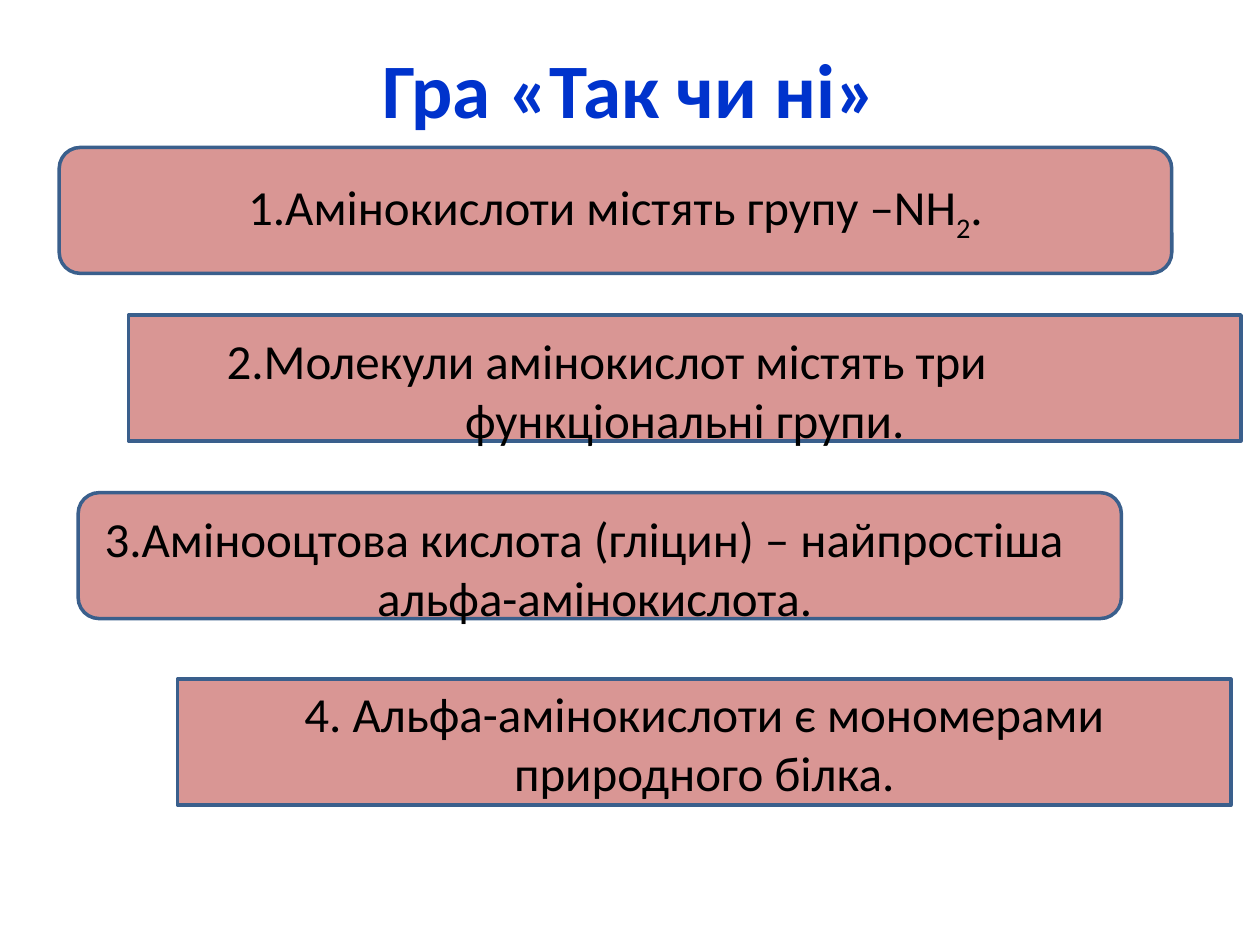
"""Build the yes-or-no quiz slide about amino acids."""
from pptx import Presentation
from pptx.dml.color import RGBColor
from pptx.enum.shapes import MSO_SHAPE
from pptx.enum.text import MSO_ANCHOR, PP_ALIGN
from pptx.util import Inches, Pt

SLIDE_WIDTH, SLIDE_HEIGHT = Inches(10), Inches(7.5)
TITLE_BLUE = RGBColor(0x00, 0x33, 0xCC)
CARD_PINK = RGBColor(0xD9, 0x96, 0x94)
CARD_BORDER = RGBColor(0x3A, 0x5F, 0x8C)
BLACK = RGBColor(0x00, 0x00, 0x00)
CARD_HEIGHT = 13.33


def place(left, top, width, height):
    """Turn percentages of the slide into a position and size."""
    return (
        int(SLIDE_WIDTH * left / 100),
        int(SLIDE_HEIGHT * top / 100),
        int(SLIDE_WIDTH * width / 100),
        int(SLIDE_HEIGHT * height / 100),
    )


def write(paragraph, text, size=28, color=BLACK, bold=False,
          align=PP_ALIGN.CENTER, indent=0, baseline=0):
    """Append a formatted run to a paragraph and align the paragraph."""
    paragraph.alignment = align
    if indent:
        paragraph._p.get_or_add_pPr().set("marL", str(Inches(indent)))
    run = paragraph.add_run()
    run.text = text
    run.font.name = "Calibri"
    run.font.size = Pt(size)
    run.font.bold = bold
    run.font.color.rgb = color
    if baseline:
        run.font._element.set("baseline", str(baseline * 1000))


def prepare_frame(frame, inset_top=0.05, inset_right=0.1):
    """Wrap and centre a text frame vertically within its insets."""
    frame.word_wrap = True
    frame.vertical_anchor = MSO_ANCHOR.MIDDLE
    frame.margin_top, frame.margin_right = Inches(inset_top), Inches(inset_right)
    return frame


def add_title(slide, text):
    """Add the heading across the top of the slide."""
    heading = slide.shapes.add_textbox(*place(5, 4, 90, 10.53))
    frame = prepare_frame(heading.text_frame)
    write(frame.paragraphs[0], text, size=44, color=TITLE_BLUE, bold=True)


def add_card(slide, outline, left, top, width, lines, **insets):
    """Add a statement card whose lines are lists of (text, format) parts."""
    card = slide.shapes.add_shape(outline, *place(left, top, width, CARD_HEIGHT))
    card.shadow.inherit = False
    card.fill.solid()
    card.fill.fore_color.rgb = CARD_PINK
    card.line.color.rgb = CARD_BORDER
    card.line.width = Pt(2)
    frame = prepare_frame(card.text_frame, **insets)
    for index, parts in enumerate(lines):
        paragraph = frame.add_paragraph() if index else frame.paragraphs[0]
        for text, style in parts:
            write(paragraph, text, **style)


def main():
    """Compose the slide and save it."""
    deck = Presentation()
    deck.slide_width, deck.slide_height = SLIDE_WIDTH, SLIDE_HEIGHT
    slide = deck.slides.add_slide(deck.slide_layouts[6])
    rounded, square = MSO_SHAPE.ROUNDED_RECTANGLE, MSO_SHAPE.RECTANGLE

    add_title(slide, "Гра «Так чи ні»")
    add_card(slide, rounded, 4.7, 15.6, 88.3, [
        [("1.Амінокислоти містять групу –NH", {}),
         ("2", {"baseline": -25}), (".", {})],
    ])
    add_card(slide, square, 10.2, 33.33, 88.3, [
        [("2.Молекули амінокислот містять три",
          {"align": PP_ALIGN.LEFT, "indent": 0.68})],
        [("функціональні групи.", {})],
    ], inset_top=0.23)
    add_card(slide, rounded, 6.2, 52.13, 82.8, [
        [("3.Амінооцтова кислота (гліцин) – найпростіша", {})],
        [("альфа-амінокислота.", {"indent": 0.17})],
    ], inset_top=0.23, inset_right=0.35)
    add_card(slide, square, 14.1, 71.87, 83.6, [
        [("4. Альфа-амінокислоти є мономерами", {})],
        [("природного білка.", {})],
    ])
    deck.save("out.pptx")


if __name__ == "__main__":
    main()
